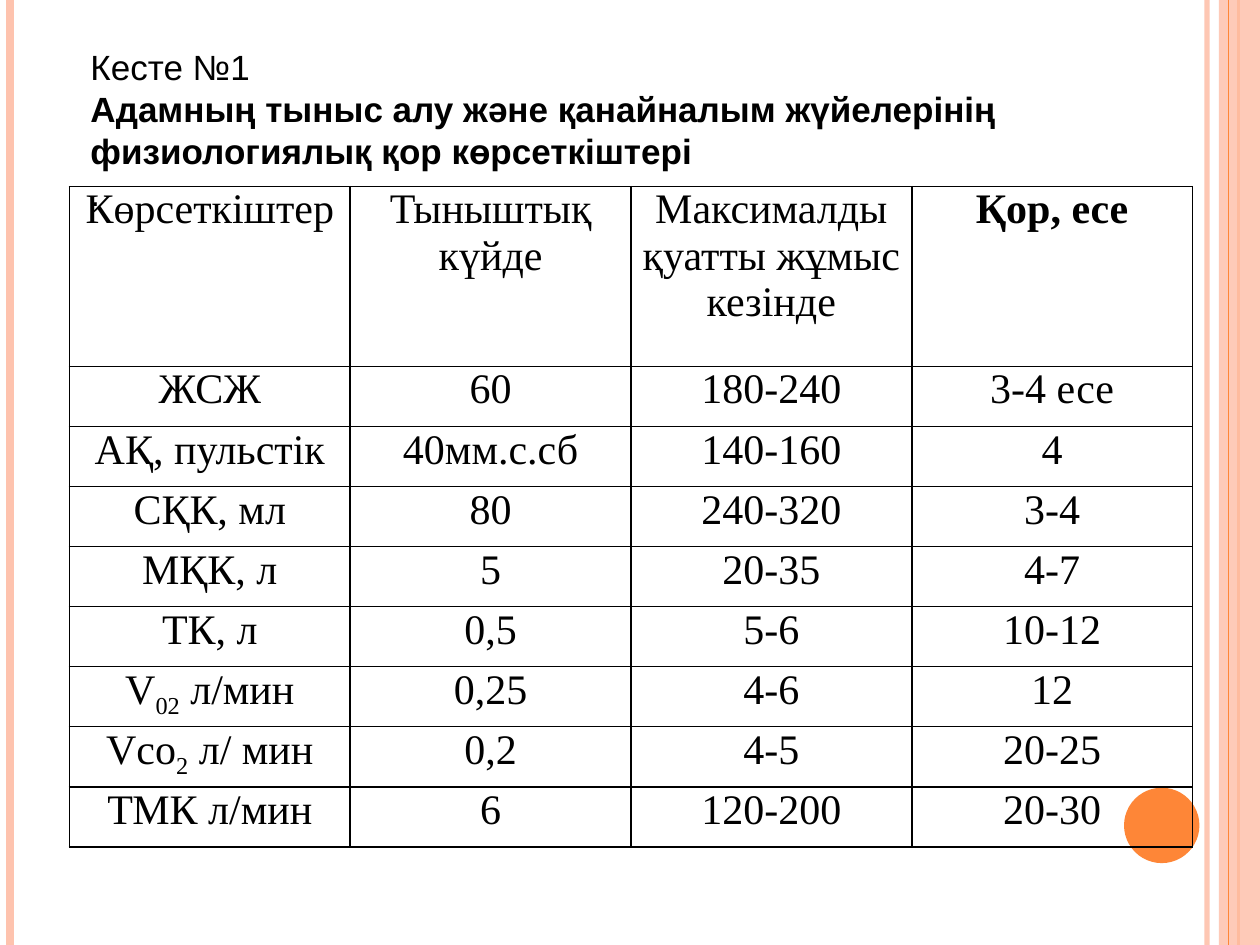
from lxml.etree import SubElement
from pptx import Presentation
from pptx.dml.color import RGBColor
from pptx.enum.shapes import MSO_CONNECTOR, MSO_SHAPE
from pptx.enum.text import MSO_ANCHOR, MSO_AUTO_SIZE, PP_ALIGN
from pptx.oxml.ns import qn
from pptx.util import Cm, Pt

BLACK = RGBColor(0x00, 0x00, 0x00)
ORANGE = RGBColor(0xFE, 0x86, 0x37)
PEACH = RGBColor(0xFE, 0xC3, 0xAE)
WIDTH, HEIGHT = 25.4, 19.05

# Content: (text, bold) for the title; in a tuple cell every second part is a subscript
TITLE = [
    ("Кесте №1", False),
    ("Адамның тыныс алу және қанайналым жүйелерінің физиологиялық қор көрсеткіштері", True),
    (".", False),
]
ROWS = [
    ["Көрсеткіштер", "Тыныштық күйде", "Максималды қуатты жұмыс кезінде", "Қор, есе"],
    ["ЖСЖ", "60", "180-240", "3-4 есе"],
    ["АҚ, пульстік", "40мм.с.сб", "140-160", "4"],
    ["СҚК, мл", "80", "240-320", "3-4"],
    ["МҚК, л", "5", "20-35", "4-7"],
    ["ТК, л", "0,5", "5-6", "10-12"],
    [("V", "02", " л/мин"), "0,25", "4-6", "12"],
    [("Vсо", "2", " л/ мин"), "0,2", "4-5", "20-25"],
    ["ТМК л/мин", "6", "120-200", "20-30"],
]
# Decoration, back to front: (x, colour, points, opacity in percent)
OUTER_LINES = [(24.33, PEACH, 3, 93), (0.2, PEACH, 4.5, 100), (24.97, ORANGE, 1.5, 100)]
INNER_LINES = [(24.77, ORANGE, 0.75, 100)]

TABLE_LEFT, TABLE_TOP = 1.4, 3.76
COLUMN_WIDTH, HEADER_HEIGHT, ROW_HEIGHT = 5.66, 3.63, 1.21
TITLE_FONT = {"name": "Arial", "size": Pt(20)}
CELL_FONT = {"name": "Times New Roman", "size": Pt(24)}
CELL_FORMAT = {"margin_left": Cm(0.18), "margin_right": Cm(0.18),
               "margin_top": 0, "margin_bottom": 0}


def set_all(target, values):
    for name, value in values.items():
        setattr(target, name, value)


def add_run(paragraph, text, font, bold):
    run = paragraph.add_run()
    run.text = text
    set_all(run.font, {**font, "bold": bold})
    run.font.color.rgb = BLACK
    return run


def set_opacity(element, percent):
    if percent < 100:
        colour = next(element.iter(qn("a:srgbClr")))
        SubElement(colour, qn("a:alpha"), val=str(percent * 1000))


def add_vertical_lines(slide, lines):
    for x, colour, points, opacity in lines:
        line = slide.shapes.add_connector(MSO_CONNECTOR.STRAIGHT, Cm(x), 0, Cm(x), Cm(HEIGHT))
        line.line.color.rgb = colour
        line.line.width = Pt(points)
        set_opacity(line._element.spPr, opacity)
        SubElement(line._element.spPr, qn("a:effectLst"))


def add_plain_shape(slide, kind, box, colour, opacity=100):
    shape = slide.shapes.add_shape(kind, *map(Cm, box))
    shape.shadow.inherit = False
    shape.fill.solid()
    shape.fill.fore_color.rgb = colour
    shape.line.fill.background()
    set_opacity(shape._element.spPr, opacity)


def fill_cell(cell, content, bold):
    set_all(cell, CELL_FORMAT)
    paragraph = cell.text_frame.paragraphs[0]
    paragraph.alignment = PP_ALIGN.CENTER
    parts = content if isinstance(content, tuple) else (content,)
    for index, part in enumerate(parts):
        run = add_run(paragraph, part, CELL_FONT, bold)
        if index % 2:
            run.font._element.set("baseline", "-25000")
    # Borders come before the fill in the cell properties
    properties = cell._tc.get_or_add_tcPr()
    for side in ("lnL", "lnR", "lnT", "lnB"):
        border = SubElement(properties, qn(f"a:{side}"), w=str(Pt(1)))
        SubElement(SubElement(border, qn("a:solidFill")), qn("a:srgbClr"), val=str(BLACK))
    cell.fill.background()


def add_table(slide):
    columns = len(ROWS[0])
    heights = [HEADER_HEIGHT] + [ROW_HEIGHT] * (len(ROWS) - 1)
    table = slide.shapes.add_table(
        len(ROWS), columns, Cm(TABLE_LEFT), Cm(TABLE_TOP),
        Cm(COLUMN_WIDTH * columns), Cm(sum(heights))).table
    set_all(table, {"first_row": False, "horz_banding": False})
    for column in table.columns:
        column.width = Cm(COLUMN_WIDTH)
    for row_index, (row, height) in enumerate(zip(ROWS, heights)):
        table.rows[row_index].height = Cm(height)
        for column_index, content in enumerate(row):
            bold = row_index == 0 and column_index == columns - 1
            fill_cell(table.cell(row_index, column_index), content, bold)


def format_title(slide):
    title = slide.shapes.title
    set_all(title, {"left": Cm(1.57), "top": Cm(0.79), "width": Cm(22.43), "height": Cm(4.45)})
    frame = title.text_frame
    set_all(frame, {"word_wrap": True, "auto_size": MSO_AUTO_SIZE.NONE,
                    "vertical_anchor": MSO_ANCHOR.TOP})
    for index, (text, bold) in enumerate(TITLE):
        paragraph = frame.add_paragraph() if index else frame.paragraphs[0]
        paragraph.alignment = PP_ALIGN.LEFT
        add_run(paragraph, text, TITLE_FONT, bold)
    # The title lies in front of the table
    slide.shapes._spTree.append(title._element)


def main():
    presentation = Presentation()
    set_all(presentation, {"slide_width": Cm(WIDTH), "slide_height": Cm(HEIGHT)})
    slide = presentation.slides.add_slide(presentation.slide_layouts[5])

    # Side stripes and circle
    add_vertical_lines(slide, OUTER_LINES)
    add_plain_shape(slide, MSO_SHAPE.RECTANGLE, (24.57, 0, 0.83, HEIGHT), PEACH, 87)
    add_vertical_lines(slide, INNER_LINES)
    add_plain_shape(slide, MSO_SHAPE.OVAL, (22.66, 15.88, 1.52, 1.52), ORANGE)

    # Table and title
    add_table(slide)
    format_title(slide)
    presentation.save("out.pptx")


if __name__ == "__main__":
    main()
